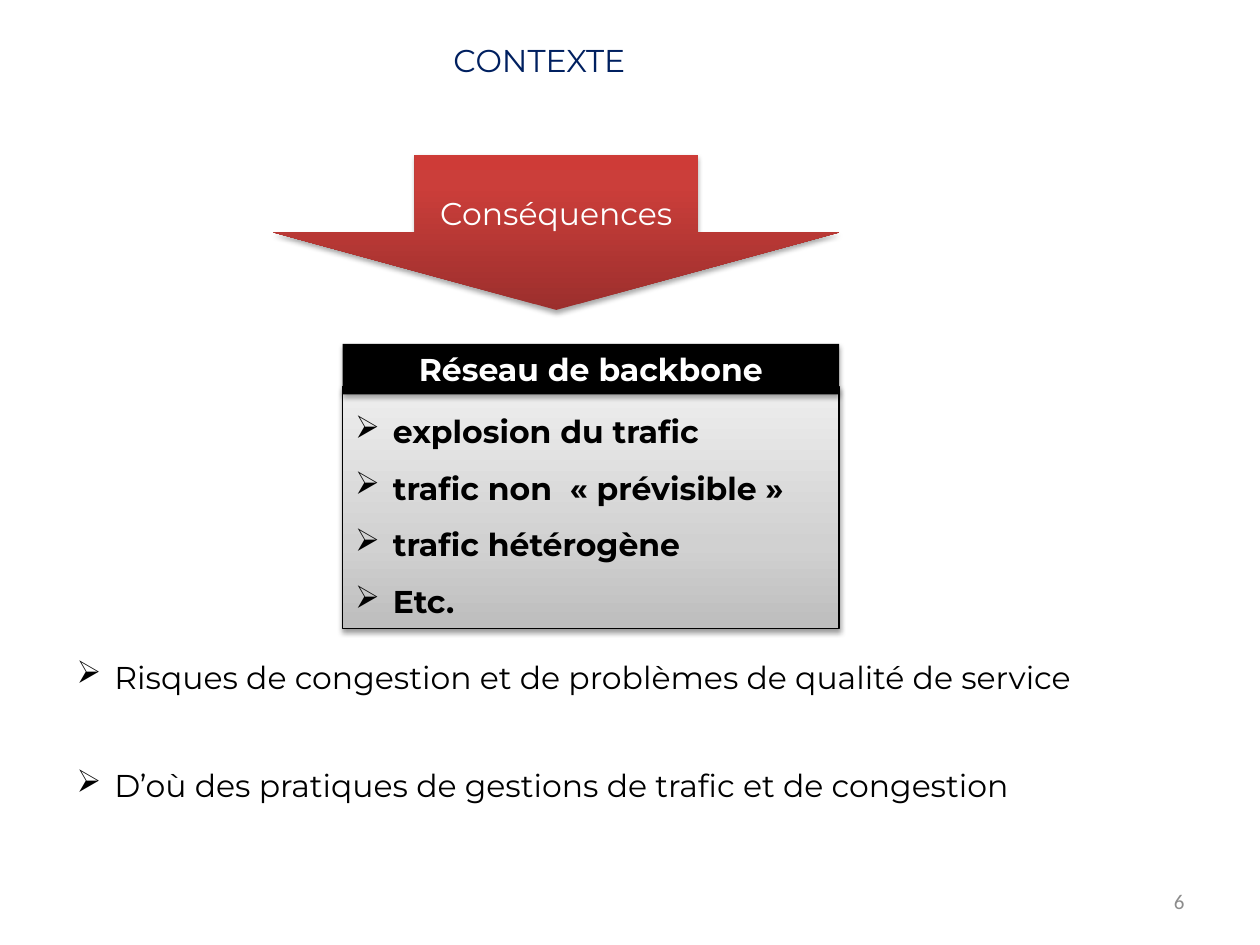
from dataclasses import dataclass
from typing import Optional

import lxml.etree
import pptx
import pptx.dml.color
import pptx.enum.shapes
import pptx.enum.text
import pptx.oxml.ns
import pptx.util

Inches = pptx.util.Inches
Align = pptx.enum.text.PP_ALIGN
Anchor = pptx.enum.text.MSO_ANCHOR
AutoSize = pptx.enum.text.MSO_AUTO_SIZE
Shape = pptx.enum.shapes.MSO_SHAPE
qn = pptx.oxml.ns.qn


@dataclass(frozen=True)
class Theme:
    font: str = "Montserrat"
    number_font: str = "Calibri"
    body_size: int = 18
    number_size: int = 12
    title: str = "002060"
    dark: str = "000000"
    light: str = "FFFFFF"
    muted: str = "8C8C8C"
    red: tuple = ((0, "9C2F2D"), (80, "CB3E3A"), (100, "CE3B37"))
    gray: tuple = ((0, "BDBDBD"), (35, "D1D1D1"), (100, "EEEEEE"))
    bullet: str = "➢"
    bullet_indent: float = 0.3


@dataclass(frozen=True)
class Box:
    left: float
    top: float
    width: float
    height: float

    def lengths(self) -> list:
        return [Inches(value) for value in (self.left, self.top, self.width, self.height)]


@dataclass(frozen=True)
class Panel:
    kind: int
    box: Box
    fill: object
    shadow_opacity: int
    shadow_distance: float
    line: Optional[str] = None


THEME = Theme()


def rgb(color: str) -> pptx.dml.color.RGBColor:
    return pptx.dml.color.RGBColor.from_string(color)


def add_color(parent, color: str):
    return lxml.etree.SubElement(parent, qn("a:srgbClr"), val=color)


def set_gradient(shape, stops: tuple) -> None:
    shape.fill.gradient()
    shape.fill.gradient_angle = 90
    stop_list = shape._element.spPr.find(".//" + qn("a:gsLst"))
    for stop in list(stop_list):
        stop_list.remove(stop)
    for position, color in stops:
        stop = lxml.etree.SubElement(stop_list, qn("a:gs"), pos=str(position * 1000))
        add_color(stop, color)


def set_shadow(shape, opacity: int, distance: float) -> None:
    shape.shadow.inherit = False
    effects = shape._element.spPr.find(qn("a:effectLst"))
    shadow = lxml.etree.SubElement(
        effects, qn("a:outerShdw"), blurRad=str(int(pptx.util.Pt(3.1))),
        dist=str(int(pptx.util.Pt(distance))), dir="5400000", rotWithShape="0")
    color = add_color(shadow, THEME.dark)
    lxml.etree.SubElement(color, qn("a:alpha"), val=str(opacity * 1000))


def set_bullet(paragraph) -> None:
    indent = int(Inches(THEME.bullet_indent))
    properties = paragraph._p.get_or_add_pPr()
    properties.set("marL", str(indent))
    properties.set("indent", str(-indent))
    lxml.etree.SubElement(properties, qn("a:buChar"), char=THEME.bullet)


def write_text(shape, *lines: str, color: str = THEME.dark, font: str = THEME.font,
               size: int = THEME.body_size, bold: bool = False, align=Align.LEFT,
               anchor=Anchor.TOP, wrap: bool = True, grow: bool = True,
               bullets: bool = False, spacing: Optional[float] = None) -> None:
    frame = shape.text_frame
    frame.word_wrap = wrap
    frame.auto_size = AutoSize.SHAPE_TO_FIT_TEXT if grow else AutoSize.NONE
    frame.vertical_anchor = anchor
    for index, line in enumerate(lines):
        paragraph = frame.add_paragraph() if index else frame.paragraphs[0]
        paragraph.alignment = align
        if spacing:
            paragraph.line_spacing = spacing
        if bullets:
            set_bullet(paragraph)
        run = paragraph.add_run()
        run.text = line
        run.font.name = font
        run.font.size = pptx.util.Pt(size)
        run.font.bold = bold
        run.font.color.rgb = rgb(color)


def add_panel(slide, panel: Panel):
    shape = slide.shapes.add_shape(panel.kind, *panel.box.lengths())
    if isinstance(panel.fill, str):
        shape.fill.solid()
        shape.fill.fore_color.rgb = rgb(panel.fill)
    else:
        set_gradient(shape, panel.fill)
    if panel.line:
        shape.line.color.rgb = rgb(panel.line)
        shape.line.width = pptx.util.Pt(0.75)
    else:
        shape.line.fill.background()
    set_shadow(shape, panel.shadow_opacity, panel.shadow_distance)
    return shape


def add_text(slide, box: Box, text: str, **text_format) -> None:
    write_text(slide.shapes.add_textbox(*box.lengths()), text, **text_format)


def main() -> None:
    presentation = pptx.Presentation()
    presentation.slide_width = Inches(10)
    presentation.slide_height = Inches(7.5)
    slide = presentation.slides.add_slide(presentation.slide_layouts[6])

    add_text(slide, Box(3.5, 0.28, 1.74, 0.4), "CONTEXTE", color=THEME.title, wrap=False)

    arrow = add_panel(slide, Panel(Shape.DOWN_ARROW, Box(2.17, 1.23, 4.49, 1.23),
                                   THEME.red, 35, 1.8))
    write_text(arrow, "Conséquences", color=THEME.light, align=Align.CENTER,
               anchor=Anchor.MIDDLE, grow=False)

    effects = add_panel(slide, Panel(Shape.RECTANGLE, Box(2.72, 3.07, 3.94, 1.92),
                                     THEME.gray, 38, 1.6, THEME.dark))
    write_text(effects, "explosion du trafic", "trafic non  « prévisible »",
               "trafic hétérogène", "Etc.", bold=True, bullets=True, spacing=1.5)

    header = add_panel(slide, Panel(Shape.RECTANGLE, Box(2.72, 2.73, 3.94, 0.4),
                                    THEME.dark, 35, 1.8))
    write_text(header, "Réseau de backbone", color=THEME.light, bold=True, align=Align.CENTER)

    add_text(slide, Box(0.51, 5.17, 9.49, 0.4),
             "Risques de congestion et de problèmes de qualité de service", bullets=True)
    add_text(slide, Box(0.51, 6.03, 8.5, 0.4),
             "D’où des pratiques de gestions de trafic et de congestion", bullets=True)
    add_text(slide, Box(7.17, 6.95, 2.33, 0.4), "6", color=THEME.muted,
             font=THEME.number_font, size=THEME.number_size, align=Align.RIGHT,
             anchor=Anchor.MIDDLE, grow=False)

    presentation.save("out.pptx")


if __name__ == "__main__":
    main()
